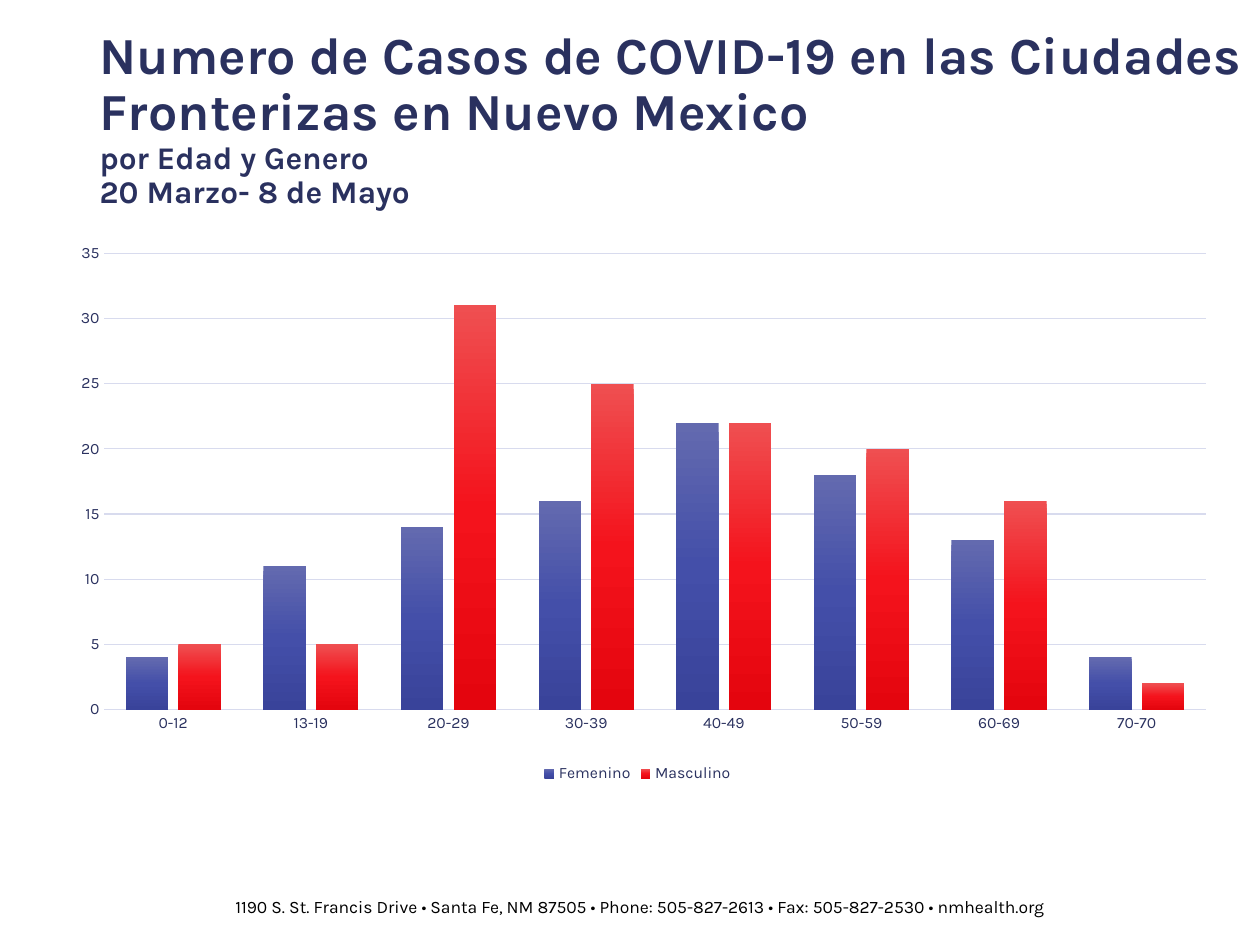
"""Build a slide with a column chart of COVID-19 cases by age and gender."""
import pptx
import pptx.chart.data
import pptx.dml.color
import pptx.enum.chart
import pptx.enum.text
import pptx.oxml
import pptx.oxml.ns
import pptx.util

SCALE = 914400 / 126
FONT = "Karla"
COLORS = {"navy": "2A315F", "grid": "D8DBEE", "black": "000000"}
AGES = ["0-12", "13-19", "20-29", "30-39", "40-49", "50-59", "60-69", "70-70"]
SERIES = {
    "Femenino": ([4, 11, 14, 16, 22, 18, 13, 4], ["636AAF", "444FA9", "39439A"]),
    "Masculino": ([5, 5, 31, 25, 22, 20, 16, 2], ["EF4F51", "F4131C", "E4050E"]),
}
PLOT = {"x": 0.044, "y": 0.017, "w": 0.942, "h": 0.839}


def px(*lengths):
    return [pptx.util.Emu(round(length * SCALE)) for length in lengths]


def style_font(font, size, color):
    font.name = FONT
    font.size = pptx.util.Pt(size)
    font.color.rgb = pptx.dml.color.RGBColor.from_string(COLORS[color])


deck = pptx.Presentation()
deck.slide_width, deck.slide_height = px(1260, 945)
page = deck.slides.add_slide(deck.slide_layouts[5])

title = page.shapes.title
title.left, title.top, title.width, title.height = px(87, 39, 1169, 194)
frame = title.text_frame
frame.word_wrap = True
frame.auto_size = pptx.enum.text.MSO_AUTO_SIZE.NONE
frame.vertical_anchor = pptx.enum.text.MSO_ANCHOR.MIDDLE
frame.margin_bottom = px(39)[0]
para = frame.paragraphs[0]
para.alignment = pptx.enum.text.PP_ALIGN.LEFT
para.line_spacing = 0.9
para.space_before = pptx.util.Pt(0)
title_lines = [
    ("Numero de Casos de COVID-19 en las Ciudades Fronterizas en Nuevo Mexico", 29.7),
    ("por Edad y Genero", 18),
    ("20 Marzo- 8 de Mayo", 18),
]
for index, (text, size) in enumerate(title_lines):
    if index:
        para.add_line_break()
    span = para.add_run()
    span.text = text
    span.font.bold = True
    style_font(span.font, size, "navy")

data = pptx.chart.data.CategoryChartData()
data.categories = AGES
for name, (values, stops) in SERIES.items():
    data.add_series(name, values)
chart = page.shapes.add_chart(
    pptx.enum.chart.XL_CHART_TYPE.COLUMN_CLUSTERED, *px(53, 244, 1169, 544), data
).chart
chart.has_title = False
style_font(chart.font, 10, "black")

chart.has_legend = True
chart.legend.position = pptx.enum.chart.XL_LEGEND_POSITION.BOTTOM
chart.legend.include_in_layout = False
style_font(chart.legend.font, 9, "navy")

for axis in (chart.category_axis, chart.value_axis):
    axis.major_tick_mark = pptx.enum.chart.XL_TICK_MARK.NONE
    axis.minor_tick_mark = pptx.enum.chart.XL_TICK_MARK.NONE
    style_font(axis.tick_labels.font, 9, "navy")
chart.value_axis.minimum_scale = 0
chart.value_axis.maximum_scale = 35
chart.value_axis.major_unit = 5
chart.value_axis.has_major_gridlines = True
chart.value_axis.format.line.fill.background()
for line in (chart.category_axis.format.line, chart.value_axis.major_gridlines.format.line):
    line.width = pptx.util.Pt(0.75)
    line.color.rgb = pptx.dml.color.RGBColor.from_string(COLORS["grid"])

plot = chart.plots[0]
plot.gap_width = 100
plot.overlap = -24
plot.vary_by_categories = False
for series in plot.series:
    stops = "".join(
        f'<a:gs pos="{position}"><a:srgbClr val="{color}"/></a:gs>'
        for position, color in zip((0, 50000, 100000), SERIES[series.name][1])
    )
    gradient = pptx.oxml.parse_xml(
        f'<a:gradFill {pptx.oxml.ns.nsdecls("a")} rotWithShape="1">'
        f'<a:gsLst>{stops}</a:gsLst><a:lin ang="5400000" scaled="0"/></a:gradFill>'
    )
    series._element.get_or_add_spPr().append(gradient)

plot_area = chart._chartSpace.chart.plotArea
for layout in plot_area.findall(pptx.oxml.ns.qn("c:layout")):
    plot_area.remove(layout)
modes = "".join(f'<c:{side}Mode val="edge"/>' for side in "xy")
places = "".join(f'<c:{side} val="{value}"/>' for side, value in PLOT.items())
plot_area.insert(0, pptx.oxml.parse_xml(
    f'<c:layout {pptx.oxml.ns.nsdecls("c")}><c:manualLayout>'
    f'<c:layoutTarget val="inner"/>{modes}{places}</c:manualLayout></c:layout>'
))

footer = page.shapes.add_textbox(*px(223, 890, 1033, 34))
footer.text_frame.word_wrap = True
para = footer.text_frame.paragraphs[0]
para.text = (
    "1190 S. St. Francis Drive • Santa Fe, NM 87505 • Phone: 505-827-2613"
    " • Fax: 505-827-2530 • nmhealth.org"
)
style_font(para.font, 10, "black")

deck.save("out.pptx")
